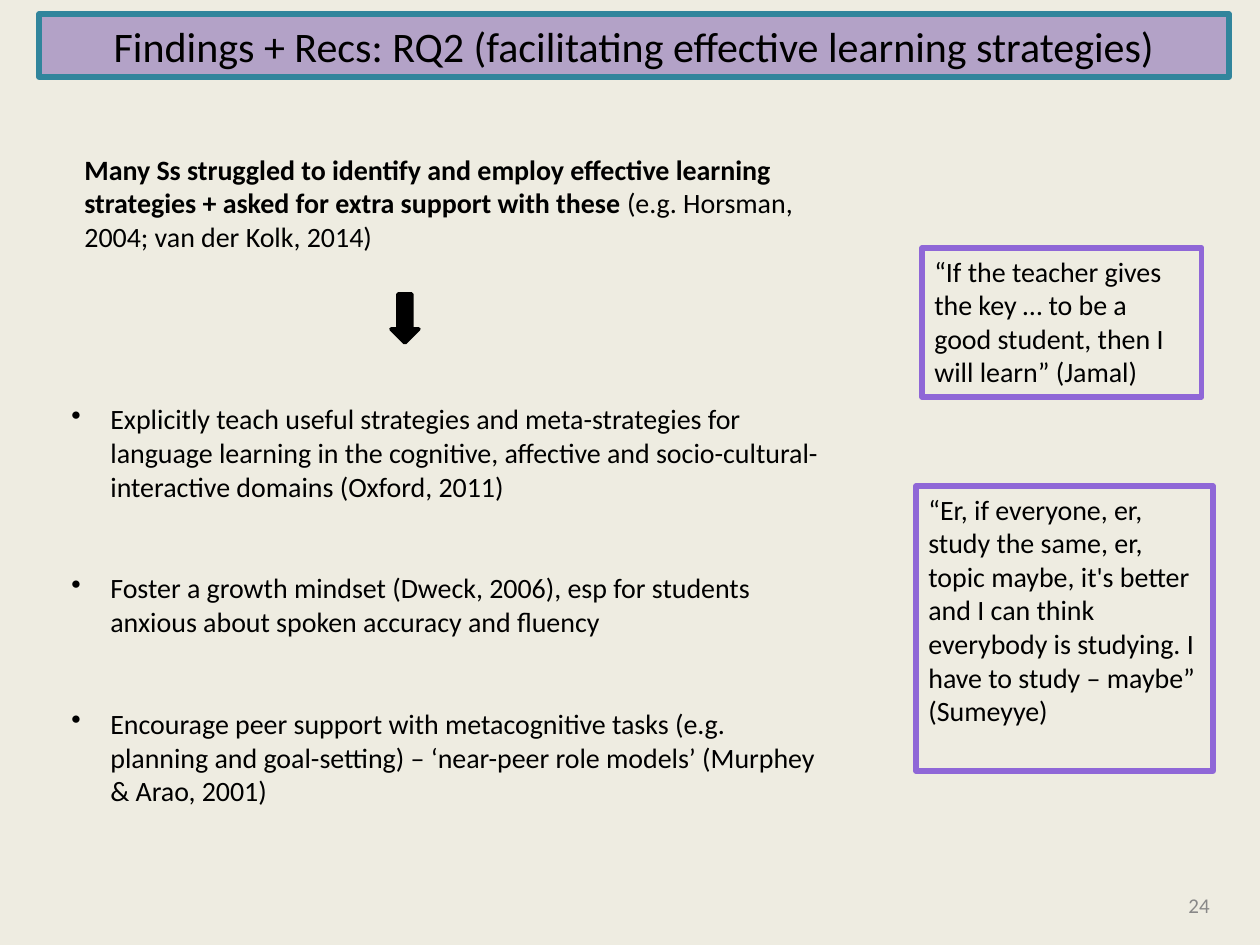
from pptx import Presentation, util as u
from pptx.dml.color import RGBColor
from pptx.enum import shapes, text
from lxml import etree

PX = 914400 / 126
NS = "http://schemas.openxmlformats.org/drawingml/2006/main"

deck = Presentation()
deck.slide_width, deck.slide_height = u.Inches(10), u.Inches(7.5)
slide = deck.slides.add_slide(deck.slide_layouts[6])


def color(code):
    return RGBColor.from_string(code)


def write(box, paras, size=16, ink="000000", align=text.PP_ALIGN.LEFT):
    """Fill a shape with paragraphs, each a list of (words, bold) runs."""
    frame = box.text_frame
    frame.word_wrap = True
    frame.vertical_anchor = text.MSO_ANCHOR.TOP
    for i, runs in enumerate(paras):
        para = frame.paragraphs[0] if i == 0 else frame.add_paragraph()
        para.alignment = align
        para.font.name, para.font.size = "Calibri", u.Pt(size)
        para.font.color.rgb = color(ink)
        for words, bold in runs:
            run = para.add_run()
            run.text = words
            run.font.bold = bold
    return frame


slide.background.fill.solid()
slide.background.fill.fore_color.rgb = color("EEECE1")

# Title bar, quotes and arrow: kind, place, fill, line, line width, words, size
RECT, DOWN = shapes.MSO_SHAPE.RECTANGLE, shapes.MSO_SHAPE.DOWN_ARROW
items = [
    (RECT, (39, 14, 1190, 63), "B3A2C7", "31859C", 3,
     "Findings + Recs: RQ2 (facilitating effective learning strategies)", 24),
    (RECT, (922, 248, 280, 149), None, "8F67D7", 3,
     "“If the teacher gives the key … to be a good student, then I will learn” (Jamal)", 16),
    (RECT, (916, 486, 297, 285), None, "8F67D7", 3,
     "“Er, if everyone, er, study the same, er, topic maybe, it's better and I can "
     "think everybody is studying. I have to study – maybe” (Sumeyye)", 16),
    (DOWN, (391, 294, 28, 49), "000000", "000000", 2, None, 16),
]
for kind, place, fill, line, width, words, size in items:
    shape = slide.shapes.add_shape(kind, *[u.Emu(int(n * PX)) for n in place])
    shape.shadow.inherit = False
    if fill:
        shape.fill.solid()
        shape.fill.fore_color.rgb = color(fill)
    else:
        shape.fill.background()
    shape.line.color.rgb = color(line)
    shape.line.width = u.Pt(width)
    if words:
        align = text.PP_ALIGN.CENTER if size == 24 else text.PP_ALIGN.LEFT
        write(shape, [[(words, False)]], size, align=align)

# Plain text: finding, advice, page number
finding, advice, page = [
    slide.shapes.add_textbox(*[u.Emu(int(n * PX)) for n in place])
    for place in [(72, 146, 776, 115), (59, 357, 776, 496), (1176, 880, 84, 50)]
]
write(finding, [[
    ("Many Ss struggled to identify and employ effective learning strategies "
     "+ asked for extra support with these ", True),
    ("(e.g. Horsman, 2004; van der Kolk, 2014)", False),
]])

points = [
    "Explicitly teach useful strategies and meta-strategies for language learning in the "
    "cognitive, affective and socio-cultural-interactive domains (Oxford, 2011)",
    "Foster a growth mindset (Dweck, 2006), esp for students anxious about spoken "
    "accuracy and fluency",
    "Encourage peer support with metacognitive tasks (e.g. planning and goal-setting) – "
    "‘near-peer role models’ (Murphey & Arao, 2001)",
]
frame = write(advice, [[(point, False)] for point in points])
frame.margin_top = u.Emu(int(45 * PX))
for i, para in enumerate(frame.paragraphs):
    if i:
        para.space_before = u.Pt(39)
    props = para._p.get_or_add_pPr()
    props.set("marL", str(int(39 * PX)))
    props.set("indent", str(int(-39 * PX)))
    mark = etree.Element(f"{{{NS}}}buChar", char="•")
    props.insert_element_before(mark, "a:tabLst", "a:defRPr", "a:extLst")

write(page, [[("24", False)]], 12, "888888").vertical_anchor = text.MSO_ANCHOR.MIDDLE

deck.save("out.pptx")
